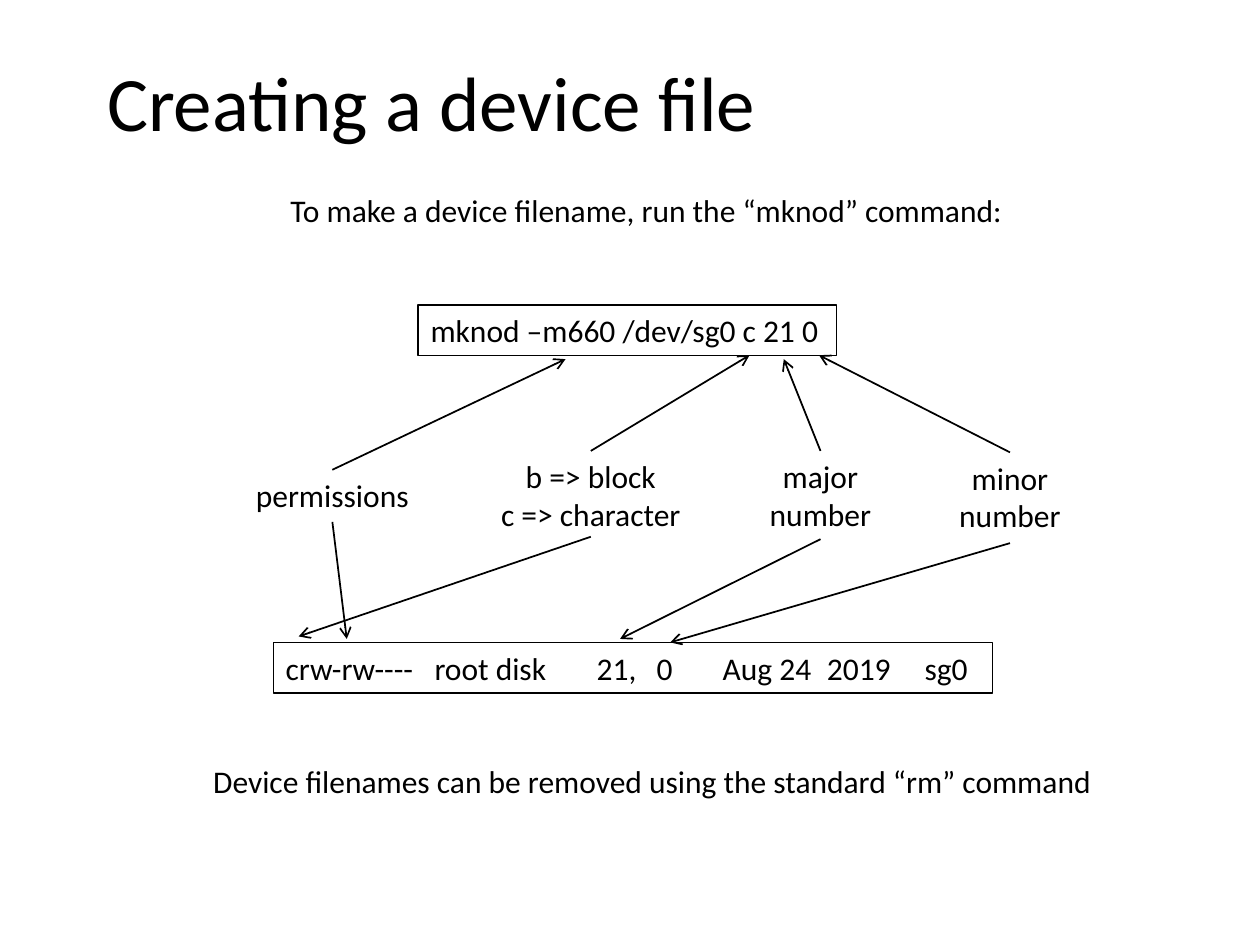
from lxml.etree import SubElement as Sub
from pptx import Presentation as Deck
from pptx.dml.color import RGBColor as Rgb
from pptx.enum.shapes import MSO_CONNECTOR as Link, MSO_SHAPE as Form
from pptx.enum.text import MSO_ANCHOR as Anchor, PP_ALIGN as Align
from pptx.oxml.ns import qn
from pptx.util import Cm, Pt

THEME = {
    "ink": Rgb(0, 0, 0),
    "font": "Calibri",
    "title": Pt(44),
    "body": Pt(18),
    "edge": Pt(0.75),
    "arrow": Pt(1),
}

# Content: text, (left, top, width, height) in cm
TITLE = ("Creating a device file", (1.83, 0.97, 13.74, 2.13))
NOTES = [
    ("To make a device filename, run the “mknod” command:", (5.51, 3.73, 15.04, 1.02)),
    ("Device filenames can be removed using the standard “rm” command",
     (3.84, 15.24, 18.62, 1.02)),
]
COMMAND = ("mknod –m660 /dev/sg0 c 21 0", (8.43, 6.15, 8.43, 1.02))
FIELDS = ["crw-rw----", "root disk", "21,", "0", "Aug 24", "2019", "sg0"]
LISTING = ("\t".join(FIELDS), (5.51, 12.95, 14.5, 1.02))
STOPS = [3, 6.27, 7.48, 8.81, 10.91, 12.88]

# Label lines, centre x, top, width, foot of label, tip above, tip below
PARTS = [
    (["permissions"], 6.7, 9.47, 3.63, 10.52, (11.4, 7.24), (6.99, 12.88)),
    (["b => block", "c => character"], 11.91, 9.09, 4.17, 10.82, (15.11, 7.16), (6.02, 12.83)),
    (["major", "number"], 16.54, 9.09, 2.59, 10.87, (15.8, 7.24), (12.5, 12.88)),
    (["minor", "number"], 20.36, 9.12, 2.59, 10.95, (16.51, 7.16), (13.51, 12.95)),
]
HIGH = {1: 1.02, 2: 1.8}  # label height by line count

deck = Deck()
deck.slide_width, deck.slide_height = Cm(25.4), Cm(19.05)
shapes = deck.slides.add_slide(deck.slide_layouts[6]).shapes


def apply(item, style):
    for name, value in style.items():
        setattr(item, name, value)


def write(shape, lines, size="body", align=Align.CENTER, wrap=False):
    frame = shape.text_frame
    apply(frame, {"word_wrap": wrap, "vertical_anchor": Anchor.TOP})
    for i, line in enumerate(lines):
        para = frame.paragraphs[0] if i == 0 else frame.add_paragraph()
        para.alignment = align
        run = para.add_run()
        run.text = line
        apply(run.font, {"name": THEME["font"], "size": THEME[size]})
        run.font.color.rgb = THEME["ink"]
    return frame


def label(lines, box, size="body"):
    write(shapes.add_textbox(*map(Cm, box)), lines, size)


def frame_box(text, box, wrap=False):
    shape = shapes.add_shape(Form.RECTANGLE, *map(Cm, box))
    shape.shadow.inherit = False
    shape.fill.background()
    shape.line.color.rgb = THEME["ink"]
    shape.line.width = THEME["edge"]
    return write(shape, [text], align=Align.LEFT, wrap=wrap)


def arrow(start, end):
    line = shapes.add_connector(Link.STRAIGHT, *map(Cm, start + end))
    line.line.color.rgb = THEME["ink"]
    line.line.width = THEME["arrow"]
    Sub(line.line._get_or_add_ln(), qn("a:tailEnd"), type="arrow")
    Sub(line._element.spPr, qn("a:effectLst"))


# Title and notes
label([TITLE[0]], TITLE[1], "title")
for text, box in NOTES:
    label([text], box)

# Command and its listing, with tab stops for the columns
frame_box(*COMMAND)
row = frame_box(*LISTING, wrap=True).paragraphs[0]
tabs = Sub(row._p.get_or_add_pPr(), qn("a:tabLst"))
for stop in STOPS:
    Sub(tabs, qn("a:tab"), pos=str(Cm(stop)), algn="l")

# Labels, each with an arrow up and an arrow down
for lines, mid, top, wide, foot, above, below in PARTS:
    label(lines, (mid - wide / 2, top, wide, HIGH[len(lines)]))
    arrow((mid, top), above)
    arrow((mid, foot), below)

deck.save("out.pptx")
